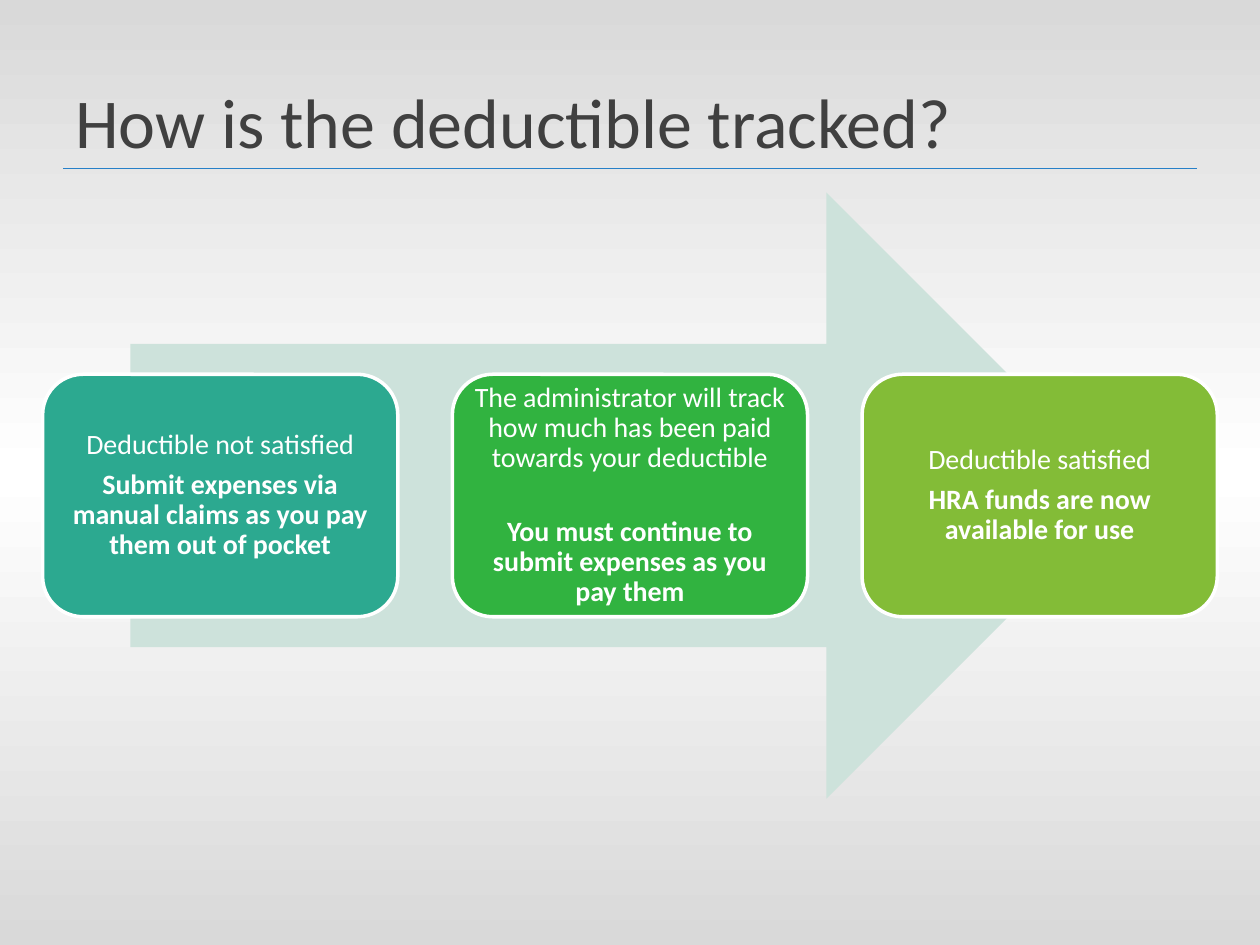
import copy
from dataclasses import dataclass

import pptx
import pptx.dml.color
import pptx.enum.shapes
import pptx.enum.text
import pptx.oxml.ns
import pptx.util
from lxml import etree

Cm, Pt = pptx.util.Cm, pptx.util.Pt
SHAPE = pptx.enum.shapes.MSO_SHAPE
ALIGN = pptx.enum.text.PP_ALIGN
ANCHOR = pptx.enum.text.MSO_ANCHOR
qn = pptx.oxml.ns.qn


@dataclass(frozen=True)
class Theme:
    font: str = "Calibri"
    title_size: int = 40
    card_size: int = 16
    title: str = "404040"
    rule: str = "2780C8"
    edge: str = "D9D9D9"
    white: str = "FFFFFF"
    arrow: str = "CDE2DB"


THEME = Theme()
SLIDE_WIDTH, SLIDE_HEIGHT = 25.4, 19.05

# Card colour, statement, space after the statement in points, instruction
STAGES = [
    ("2CA990", "Deductible not satisfied", 5.6,
     "Submit expenses via manual claims as you pay them out of pocket"),
    ("31B340", "The administrator will track how much has been paid towards your deductible", 25,
     "You must continue to submit expenses as you pay them"),
    ("83BC37", "Deductible satisfied", 5.6,
     "HRA funds are now available for use"),
]


def rgb(value):
    return pptx.dml.color.RGBColor.from_string(value)


def add_text(frame, text, *, size, color, bold=False, align=ALIGN.LEFT,
             line_spacing=1.0, space_after=0):
    """Write one paragraph, using the frame's first one while it is empty."""
    first = frame.paragraphs[0]
    paragraph = frame.add_paragraph() if first.runs else first
    paragraph.alignment = align
    paragraph.line_spacing = line_spacing
    paragraph.space_after = Pt(space_after)
    run = paragraph.add_run()
    run.text = text
    run.font.name = THEME.font
    run.font.size = Pt(size)
    run.font.bold = bold
    run.font.color.rgb = rgb(color)


def add_plain_shape(slide, kind, left, top, width, height):
    shape = slide.shapes.add_shape(kind, Cm(left), Cm(top), Cm(width), Cm(height))
    shape.shadow.inherit = False
    shape.line.fill.background()
    return shape


def add_backdrop(slide, left, top, width, height):
    """Vertical gradient that is light in the middle and grey at both ends."""
    backdrop = add_plain_shape(slide, SHAPE.RECTANGLE, left, top, width, height)
    backdrop.fill.gradient()
    backdrop.fill.gradient_angle = 270
    stop_list = backdrop.element.spPr.find(".//" + qn("a:gsLst"))
    stop_list.insert(1, copy.deepcopy(stop_list[0]))
    colors = (THEME.edge, THEME.white, THEME.edge)
    for stop, position, color in zip(backdrop.fill.gradient_stops, (0, 0.5, 1), colors):
        stop.position = position
        stop.color.rgb = rgb(color)


def add_heading(slide, left, top, width, height):
    heading = slide.shapes.add_textbox(Cm(left), Cm(top), Cm(width), Cm(height))
    frame = heading.text_frame
    frame.word_wrap = True
    frame.vertical_anchor = ANCHOR.BOTTOM
    add_text(frame, "How is the deductible tracked?", size=THEME.title_size,
             color=THEME.title, line_spacing=0.8)

    rule_y = Cm(top + height)
    rule = slide.shapes.add_connector(pptx.enum.shapes.MSO_CONNECTOR.STRAIGHT,
                                      Cm(left), rule_y, Cm(left + width), rule_y)
    rule.line.color.rgb = rgb(THEME.rule)
    rule.line.width = Pt(0.5)
    etree.SubElement(rule.element.spPr, qn("a:effectLst"))


def add_stage_card(slide, stage, left, top, width, height):
    color, statement, space_after, instruction = stage
    card = add_plain_shape(slide, SHAPE.ROUNDED_RECTANGLE, left, top, width, height)
    card.fill.solid()
    card.fill.fore_color.rgb = rgb(color)
    card.line.color.rgb = rgb(THEME.white)
    card.line.width = Pt(2)

    frame = card.text_frame
    frame.word_wrap = True
    frame.vertical_anchor = ANCHOR.MIDDLE
    frame.margin_left = frame.margin_right = Cm(0.17)
    frame.margin_top = frame.margin_bottom = Cm(0.17)
    style = dict(size=THEME.card_size, color=THEME.white, align=ALIGN.CENTER,
                 line_spacing=0.9)
    add_text(frame, statement, space_after=space_after, **style)
    add_text(frame, instruction, bold=True, space_after=5.6, **style)


def add_process(slide, left, top, width, height):
    """Broad arrow with a row of equal stage cards across its middle."""
    arrow_width = 20.14
    arrow = add_plain_shape(slide, SHAPE.RIGHT_ARROW, left + (width - arrow_width) / 2,
                            top, arrow_width, height)
    arrow.fill.solid()
    arrow.fill.fore_color.rgb = rgb(THEME.arrow)

    gap = 1.1
    card_width = (width - gap * (len(STAGES) - 1)) / len(STAGES)
    card_height = height * 0.4
    card_top = top + (height - card_height) / 2
    for index, stage in enumerate(STAGES):
        add_stage_card(slide, stage, left + index * (card_width + gap), card_top,
                       card_width, card_height)


def main():
    deck = pptx.Presentation()
    deck.slide_width, deck.slide_height = Cm(SLIDE_WIDTH), Cm(SLIDE_HEIGHT)
    slide = deck.slides.add_slide(deck.slide_layouts[6])
    add_backdrop(slide, 0, 0, SLIDE_WIDTH, SLIDE_HEIGHT)
    add_heading(slide, 1.27, 0.22, 22.86, 3.17)
    add_process(slide, 0.86, 3.88, 23.68, 12.22)
    deck.save("out.pptx")


if __name__ == "__main__":
    main()
